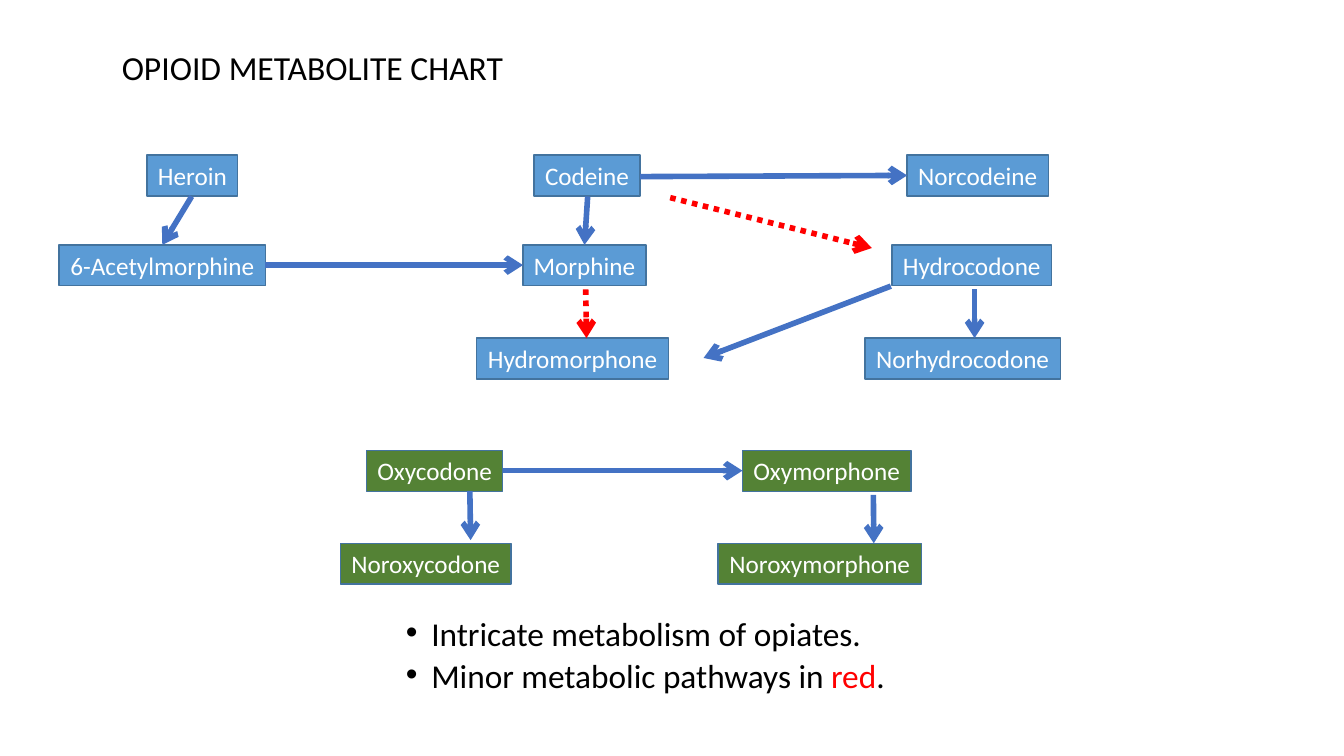
import pptx
import pptx.util
import pptx.dml.color
import pptx.enum.dml
import pptx.enum.shapes
import pptx.enum.text
import pptx.oxml.ns
import lxml.etree
from dataclasses import dataclass

Cm = pptx.util.Cm
Pt = pptx.util.Pt


@dataclass(frozen=True)
class Theme:
    font: str = "Calibri"
    ink: str = "000000"
    label: str = "FFFFFF"
    opiate: str = "5B9BD5"
    oxy: str = "548235"
    border: str = "43739E"
    major: str = "4472C4"
    minor: str = "FF0000"
    title_size: float = 24
    label_size: float = 18
    note_size: float = 23.8


theme = Theme()


def rgb(color):
    return pptx.dml.color.RGBColor.from_string(color)


def style_run(run, size, color):
    run.font.name = theme.font
    run.font.size = Pt(size)
    run.font.color.rgb = rgb(color)


deck = pptx.Presentation()
deck.slide_width, deck.slide_height = Cm(33.87), Cm(19.05)
slide = deck.slides.add_slide(deck.slide_layouts[6])

notes = slide.shapes.add_textbox(Cm(9.98), Cm(15.6), Cm(13.92), Cm(2.11)).text_frame
notes.word_wrap = True
note_lines = [
    [("Intricate metabolism of opiates.", theme.ink)],
    [("Minor metabolic pathways in ", theme.ink), ("red", theme.minor), (".", theme.ink)],
]
for index, pieces in enumerate(note_lines):
    note = notes.add_paragraph() if index else notes.paragraphs[0]
    note.line_spacing = 0.7
    note.space_before = Pt(10)
    for words, color in pieces:
        run = note.add_run()
        run.text = words
        style_run(run, theme.note_size, color)
    properties = note._p.get_or_add_pPr()
    properties.set("marL", str(Cm(0.64)))
    properties.set("indent", str(-Cm(0.64)))
    bullet_font = lxml.etree.SubElement(properties, pptx.oxml.ns.qn("a:buFont"))
    bullet_font.set("typeface", "Arial")
    bullet = lxml.etree.SubElement(properties, pptx.oxml.ns.qn("a:buChar"))
    bullet.set("char", "•")

drug_height = 1.03
drug_rows = [
    (3.91, theme.opiate, [("Heroin", 3.71, 2.28), ("Codeine", 13.46, 2.67), ("Norcodeine", 22.86, 3.56)]),
    (6.17, theme.opiate, [("6-Acetylmorphine", 1.49, 5.21), ("Morphine", 13.18, 3.1), ("Hydrocodone", 22.48, 4.02)]),
    (8.52, theme.opiate, [("Hydromorphone", 12.01, 4.84), ("Norhydrocodone", 21.8, 4.92)]),
    (11.35, theme.oxy, [("Oxycodone", 9.24, 3.43), ("Oxymorphone", 18.71, 4.25)]),
    (13.69, theme.oxy, [("Noroxycodone", 8.58, 4.3), ("Noroxymorphone", 18.1, 5.12)]),
]
for top, fill, drugs in drug_rows:
    for name, left, width in drugs:
        drug = slide.shapes.add_shape(
            pptx.enum.shapes.MSO_SHAPE.RECTANGLE, Cm(left), Cm(top), Cm(width), Cm(drug_height)
        )
        drug.shadow.inherit = False
        drug.fill.solid()
        drug.fill.fore_color.rgb = rgb(fill)
        drug.line.color.rgb = rgb(theme.border)
        drug.line.width = Pt(1)
        drug.text_frame.word_wrap = False
        drug.text_frame.text = name
        drug.text_frame.paragraphs[0].alignment = pptx.enum.text.PP_ALIGN.CENTER
        style_run(drug.text_frame.paragraphs[0].runs[0], theme.label_size, theme.label)

major_pathways = [
    (4.83, 4.95, 4.09, 6.17),
    (6.69, 6.68, 13.18, 6.68),
    (14.81, 4.95, 14.73, 6.17),
    (16.13, 4.45, 22.86, 4.42),
    (24.56, 7.29, 24.56, 8.52),
    (12.67, 11.86, 18.71, 11.86),
    (11.84, 12.37, 11.86, 13.61),
    (22.01, 12.47, 22.02, 13.69),
    (22.45, 7.21, 17.73, 9.02),
]
minor_pathways = [
    (14.76, 7.29, 14.78, 8.52),
    (16.89, 4.98, 21.97, 6.25),
]
for pathways, color, dash in [
    (major_pathways, theme.major, None),
    (minor_pathways, theme.minor, pptx.enum.dml.MSO_LINE.ROUND_DOT),
]:
    for ends in pathways:
        pathway = slide.shapes.add_connector(
            pptx.enum.shapes.MSO_CONNECTOR.STRAIGHT, *[Cm(end) for end in ends]
        )
        pathway.line.color.rgb = rgb(color)
        pathway.line.width = Pt(4)
        pathway.line.dash_style = dash
        outline = pathway.line._get_or_add_ln()
        lxml.etree.SubElement(outline, pptx.oxml.ns.qn("a:tailEnd")).set("type", "arrow")
        lxml.etree.SubElement(pathway._element.spPr, pptx.oxml.ns.qn("a:effectLst"))

title = slide.shapes.add_textbox(Cm(2.82), Cm(1.07), Cm(10.2), Cm(1.28)).text_frame
title.word_wrap = False
title.text = "OPIOID METABOLITE CHART"
style_run(title.paragraphs[0].runs[0], theme.title_size, theme.ink)

deck.save("out.pptx")
